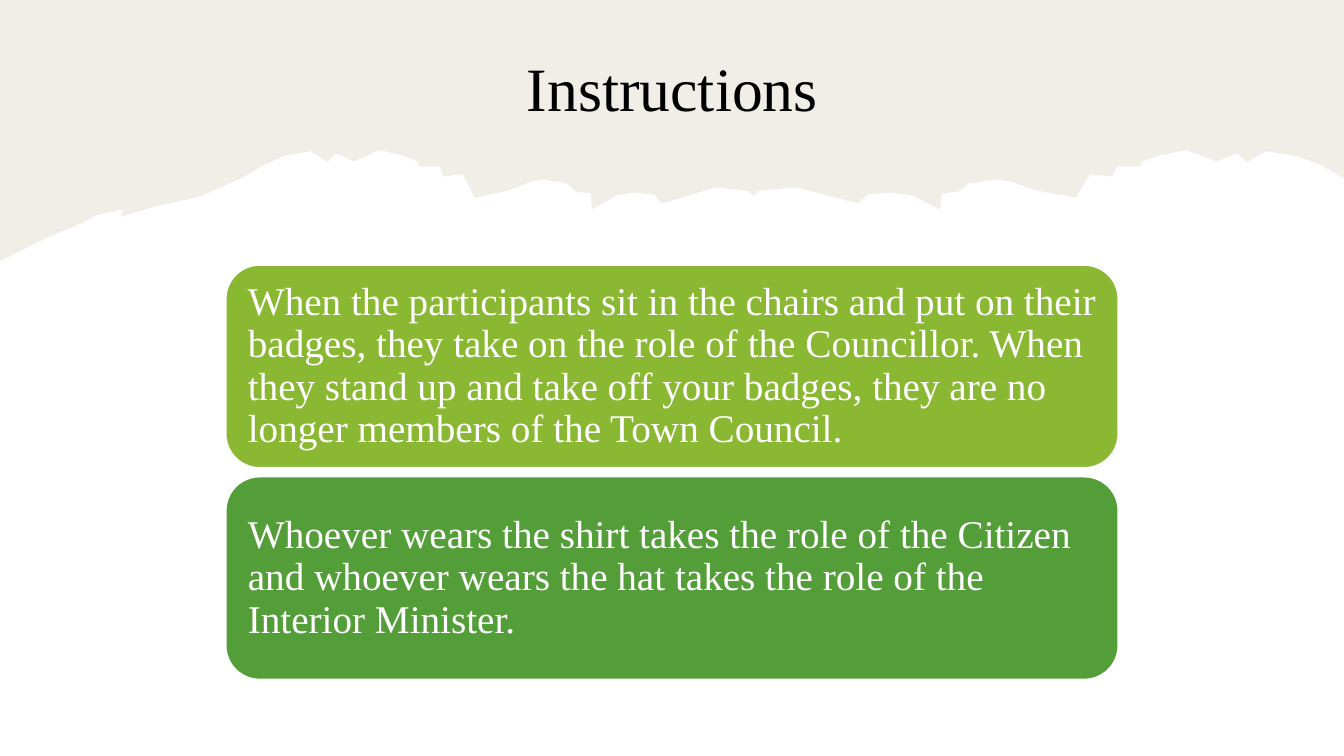
from lxml import etree
from pptx import Presentation
from pptx.dml.color import RGBColor
from pptx.enum.shapes import MSO_SHAPE
from pptx.enum.text import MSO_ANCHOR, MSO_AUTO_SIZE, PP_ALIGN
from pptx.oxml.ns import qn
from pptx.util import Pt

PX = 9144
WIDE, HIGH = 1333, 750
FONT = "Times New Roman"
SAND = RGBColor(0xE3, 0xDE, 0xD1)
LIME = RGBColor(0x8A, 0xB8, 0x33)
GREEN = RGBColor(0x54, 0x9E, 0x39)
WHITE = RGBColor(0xFF, 0xFF, 0xFF)
BLACK = RGBColor(0, 0, 0)
ROUND = MSO_SHAPE.ROUNDED_RECTANGLE
MIDDLE = MSO_ANCHOR.MIDDLE
FIXED = MSO_AUTO_SIZE.NONE
LEFT, CENTER = PP_ALIGN.LEFT, PP_ALIGN.CENTER

CARDS = [
    (LIME, "When the participants sit in the chairs and put on their badges, "
           "they take on the role of the Councillor. When they stand up and "
           "take off your badges, they are no longer members of the Town Council."),
    (GREEN, "Whoever wears the shirt takes the role of the Citizen and whoever "
            "wears the hat takes the role of the Interior Minister."),
]

SLOPE = [(0, 259), (46, 236), (82, 221), (97, 213), (122, 208), (120, 215),
         (150, 206), (198, 195), (239, 177)]
RIPS = [(261, 164), (281, 155), (308, 150), (325, 161), (333, 152),
        (351, 160), (376, 149), (399, 154), (414, 160), (416, 165),
        (436, 165), (440, 175), (459, 173), (471, 196), (505, 189),
        (527, 180), (538, 178), (563, 182), (571, 190), (586, 192),
        (587, 208), (611, 194), (629, 191), (649, 193), (657, 202),
        (686, 193), (710, 186), (741, 189)]
MID = 747
STRETCH = 1.16


def place(shape, box):
    """Move a shape to a box given in px."""
    shape.left, shape.top, shape.width, shape.height = [n * PX for n in box]


def write(shape, text, size, color, align):
    """Set the text of a shape as one run."""
    frame = shape.text_frame
    frame.word_wrap = True
    frame.auto_size = FIXED
    frame.vertical_anchor = MIDDLE
    para = frame.paragraphs[0]
    para.alignment = align
    para.line_spacing = 0.9
    run = para.add_run()
    run.text = text
    run.font.name = FONT
    run.font.size = Pt(size)
    run.font.color.rgb = color


def add_torn(slide, left, top):
    """Draw the half-clear torn band, its rips mirrored and stretched."""
    twin = [(MID + (MID - x) * STRETCH, y) for x, y in reversed(RIPS)]
    edge = SLOPE + RIPS + [(MID, 194)] + twin
    edge += [(WIDE, 177), (WIDE, 0), (0, 0)]
    points = [(round((left + x) * PX), (top + y) * PX) for x, y in edge]
    pen = slide.shapes.build_freeform(*points[0])
    pen.add_line_segments(points[1:], close=True)
    band = pen.convert_to_shape()
    band.shadow.inherit = False
    band.fill.solid()
    band.fill.fore_color.rgb = SAND
    band.line.fill.background()
    tint = band._element.spPr.find(qn("a:solidFill")).find(qn("a:srgbClr"))
    etree.SubElement(tint, qn("a:alpha"), val="50000")


def add_title(slide, box):
    """Put the heading in the title placeholder, above the band."""
    title = slide.shapes.title
    place(title, box)
    write(title, "Instructions", 44, BLACK, CENTER)
    slide.shapes._spTree.append(title._element)


def add_cards(slide, box, gap):
    """Stack the cards evenly in a box."""
    left, top, width, height = box
    tall = (height - gap * (len(CARDS) - 1)) // len(CARDS)
    for row, (color, text) in enumerate(CARDS):
        card = slide.shapes.add_shape(ROUND, 0, 0, 0, 0)
        place(card, (left, top + row * (tall + gap), width, tall))
        card.shadow.inherit = False
        card.fill.solid()
        card.fill.fore_color.rgb = color
        card.line.color.rgb = WHITE
        card.line.width = Pt(1)
        frame = card.text_frame
        frame.margin_left = frame.margin_top = frame.margin_bottom = 12 * PX
        frame.margin_right = 10 * PX
        write(card, text, 28, WHITE, LEFT)


def main():
    """Build and save the slide."""
    deck = Presentation()
    deck.slide_width, deck.slide_height = WIDE * PX, HIGH * PX
    slide = deck.slides.add_slide(deck.slide_layouts[5])
    add_torn(slide, 0, 0)
    add_title(slide, (92, 40, 1150, 102))
    add_cards(slide, (224, 263, 885, 411), 9)
    deck.save("out.pptx")


if __name__ == "__main__":
    main()
